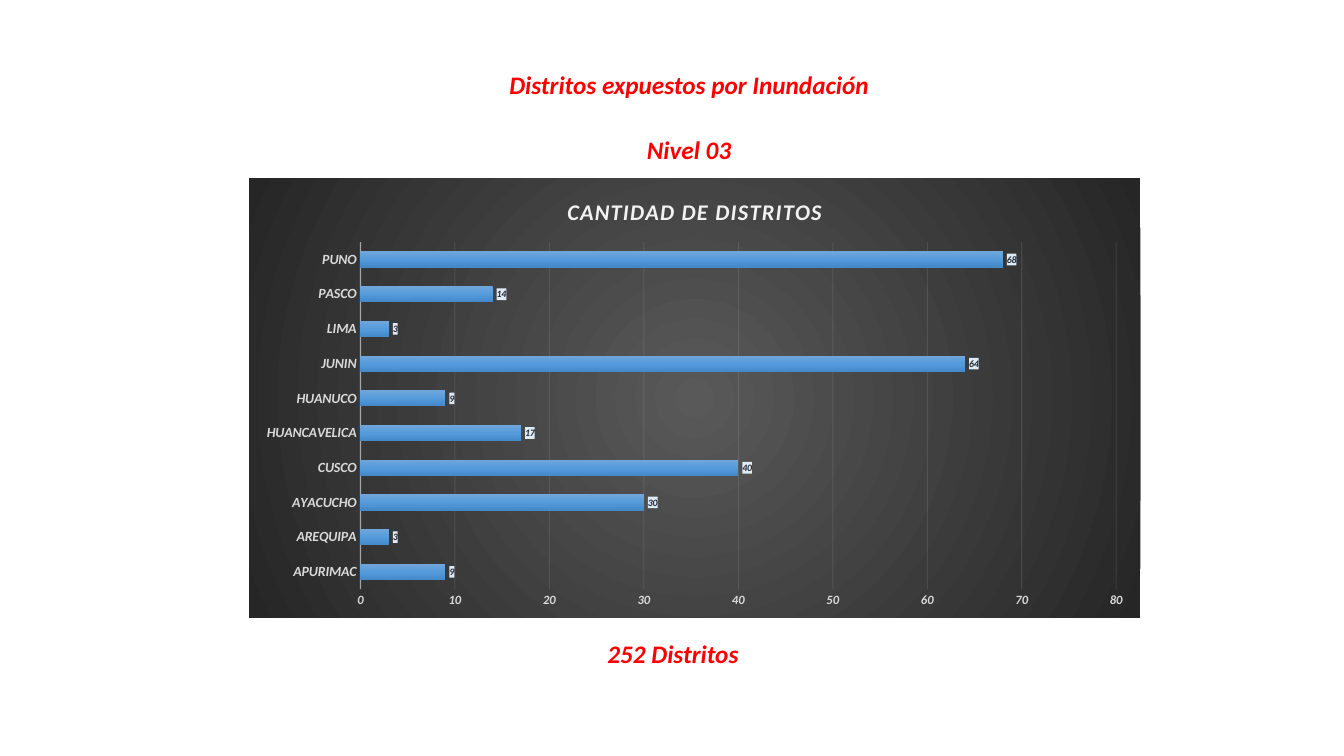
import dataclasses

import lxml.etree
import pptx
import pptx.chart.data
import pptx.dml.color
import pptx.enum.chart
import pptx.enum.text
import pptx.oxml
import pptx.oxml.ns
import pptx.util

Inches = pptx.util.Inches
Pt = pptx.util.Pt
qn = pptx.oxml.ns.qn


@dataclasses.dataclass(frozen=True)
class Theme:
    font: str = "Calibri"
    red: str = "FF0000"
    pale: str = "F2F2F2"
    grey: str = "D9D9D9"
    ink: str = "222A35"
    tag: str = "DEEBF7"
    panel: tuple = ((0, "595959"), (100, "262626"))
    bar: tuple = ((0, "71A6DB"), (50, "559BDB"), (100, "448ACA"))
    head: int = 18
    title: int = 16
    cat: int = 10
    val: int = 9
    label: int = 7


THEME = Theme()
RADIAL = ('<a:path path="circle"><a:fillToRect l="50000" t="50000" '
          'r="50000" b="50000"/></a:path>')
DOWN = '<a:lin ang="5400000" scaled="0"/>'

HEADS = [
    ("Distritos expuestos por Inundación", 4.93, 0.64, 3.81),
    ("252 Distritos", 5.9, 6.28, 1.55),
    ("Nivel 03", 5.98, 1.28, 1.71),
]
COUNTS = {
    "APURIMAC": 9, "AREQUIPA": 3, "AYACUCHO": 30, "CUSCO": 40,
    "HUANCAVELICA": 17, "HUANUCO": 9, "JUNIN": 64, "LIMA": 3,
    "PASCO": 14, "PUNO": 68,
}


def rgb(code):
    return pptx.dml.color.RGBColor.from_string(code)


def style(font, size, color):
    font.name = THEME.font
    font.size = Pt(size)
    font.bold = font.italic = True
    font.color.rgb = rgb(color)


def make(tag, body):
    """Build a chart element from its tag and inner XML."""
    spaces = pptx.oxml.ns.nsdecls("c", "a")
    return pptx.oxml.parse_xml(f"<{tag} {spaces}>{body}</{tag}>")


def grad(stops, shade):
    marks = "".join(
        f'<a:gs pos="{pos * 1000}"><a:srgbClr val="{code}"/></a:gs>'
        for pos, code in stops)
    return f"<a:gradFill><a:gsLst>{marks}</a:gsLst>{shade}</a:gradFill>"


def draw_line(line, root, width, alpha):
    """Colour a chart line and make it partly clear."""
    line.color.rgb = rgb(THEME.pale)
    line.width = Pt(width)
    color = next(root.find(qn("c:spPr")).iter(qn("a:srgbClr")))
    lxml.etree.SubElement(color, qn("a:alpha")).set("val", str(alpha * 1000))


def add_head(slide, text, left, top, width):
    box = slide.shapes.add_textbox(
        Inches(left), Inches(top), Inches(width), Inches(0.4))
    frame = box.text_frame
    frame.word_wrap = True
    frame.text = text
    line = frame.paragraphs[0]
    line.alignment = pptx.enum.text.PP_ALIGN.CENTER
    style(line.runs[0].font, THEME.head, THEME.red)


def set_title(chart, text):
    frame = chart.chart_title.text_frame
    frame.text = text
    run = frame.paragraphs[0].runs[0]
    style(run.font, THEME.title, THEME.pale)
    run.font._element.set("spc", "100")


def set_axes(chart):
    none = pptx.enum.chart.XL_TICK_MARK.NONE
    cat, val = chart.category_axis, chart.value_axis
    for axis, size in ((cat, THEME.cat), (val, THEME.val)):
        axis.major_tick_mark = axis.minor_tick_mark = none
        style(axis.tick_labels.font, size, THEME.grey)
    cat.has_major_gridlines = False
    draw_line(cat.format.line, cat._element, 1, 54)
    val.minimum_scale, val.maximum_scale, val.major_unit = 0, 80, 10
    val.tick_labels.number_format = "#,##0"
    val.tick_labels.number_format_is_linked = False
    val.format.line.fill.background()
    draw_line(val.major_gridlines.format.line,
              val._element.find(qn("c:majorGridlines")), 0.75, 10)


def set_bars(plot):
    plot.gap_width = 115
    plot.overlap = -20
    plot.vary_by_categories = False
    bars = plot.series[0]
    bars.invert_if_negative = False
    bars._element.get_or_add_spPr().append(
        pptx.oxml.parse_xml(grad(THEME.bar, DOWN).replace(
            "<a:gradFill>",
            f"<a:gradFill {pptx.oxml.ns.nsdecls('a')}>", 1)))
    tags = bars.data_labels
    tags.show_value = True
    tags.number_format = "#,##0"
    tags.number_format_is_linked = False
    tags.position = pptx.enum.chart.XL_LABEL_POSITION.OUTSIDE_END
    style(tags.font, THEME.label, THEME.ink)
    fill = f'<a:solidFill><a:srgbClr val="{THEME.tag}"/></a:solidFill>'
    tags._element.find(qn("c:txPr")).addprevious(make("c:spPr", fill))


def set_panel(chart):
    """Shade the chart area and fix the place of the plot."""
    root = chart._chartSpace.find(qn("c:chart"))
    root.addnext(make(
        "c:spPr", grad(THEME.panel, RADIAL) + "<a:ln><a:noFill/></a:ln>"))
    area = root.find(qn("c:plotArea"))
    for old in area.findall(qn("c:layout")):
        area.remove(old)
    modes = ('<c:layoutTarget val="inner"/>'
             '<c:xMode val="edge"/><c:yMode val="edge"/>')
    place = {"x": 0.125, "y": 0.145, "w": 0.848, "h": 0.79}
    sizes = "".join(f'<c:{key} val="{num}"/>' for key, num in place.items())
    area.insert(0, make(
        "c:layout", f"<c:manualLayout>{modes}{sizes}</c:manualLayout>"))


def add_bars(slide):
    data = pptx.chart.data.CategoryChartData(number_format="#,##0")
    data.categories = list(COUNTS)
    data.add_series("Series 1", list(COUNTS.values()))
    chart = slide.shapes.add_chart(
        pptx.enum.chart.XL_CHART_TYPE.BAR_CLUSTERED, Inches(2.47),
        Inches(1.77), Inches(8.84), Inches(4.36), data).chart
    chart.font.name = THEME.font
    chart.font.size = Pt(THEME.cat)
    chart.has_legend = False
    set_title(chart, "CANTIDAD DE DISTRITOS")
    set_axes(chart)
    set_bars(chart.plots[0])
    set_panel(chart)


def main():
    deck = pptx.Presentation()
    deck.slide_width = Inches(13.33)
    deck.slide_height = Inches(7.5)
    slide = deck.slides.add_slide(deck.slide_layouts[6])
    for head in HEADS:
        add_head(slide, *head)
    add_bars(slide)
    deck.save("out.pptx")


if __name__ == "__main__":
    main()
